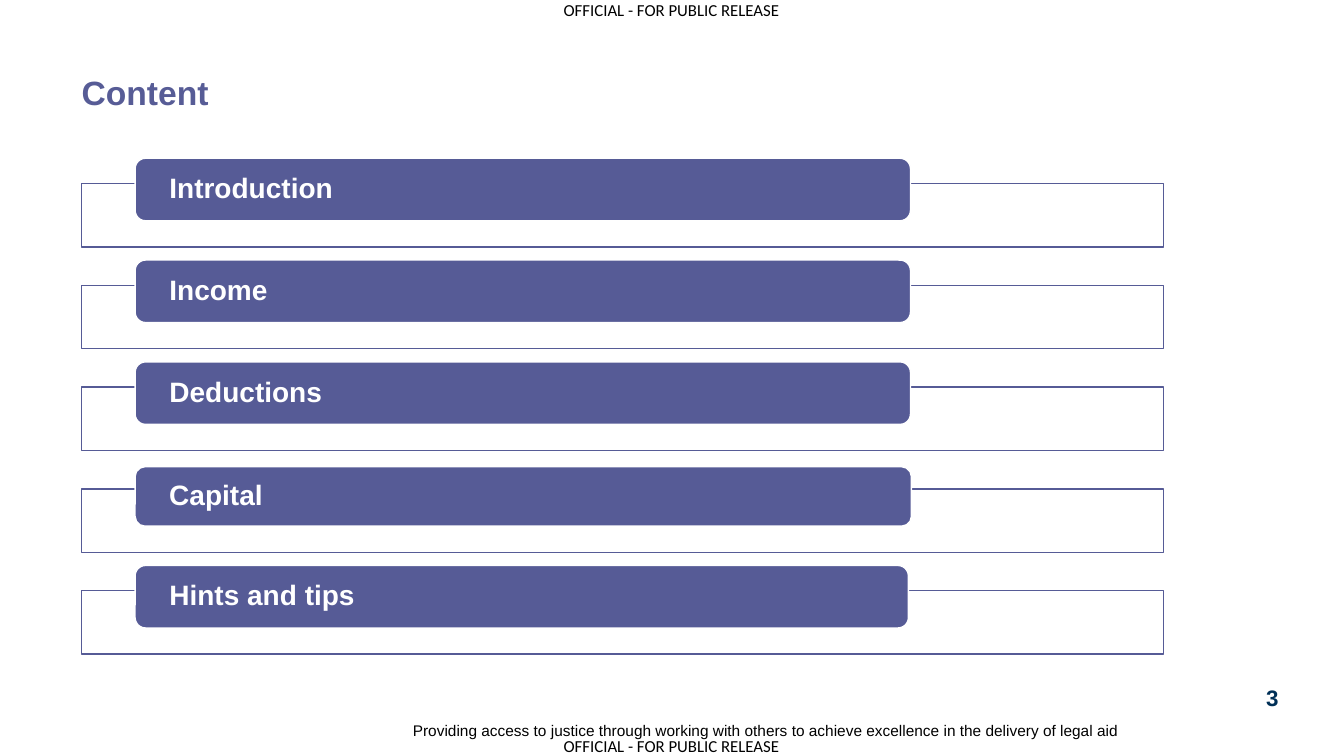
from lxml import etree
from pptx import Presentation
from pptx.dml.color import RGBColor
from pptx.enum import shapes, text
from pptx.oxml.ns import qn
from pptx.util import Inches, Pt

TITLE = "Content"
PAGE_NUMBER = "3"
MARKING = "OFFICIAL - FOR PUBLIC RELEASE"
MISSION = ("Providing access to justice through working with others "
           "to achieve excellence in the delivery of legal aid")
TOPICS = [
    ("Introduction", 7.69, 0.62),
    ("Income", 7.69, 0.62),
    ("Deductions", 7.69, 0.62),
    ("Capital", 7.7, 0.59),
    ("Hints and tips", 7.67, 0.62),
]

THEME = {
    "font": "Arial", "marking_font": "Calibri",
    "title": "575C96", "bar": "565B96", "white": "FFFFFF",
    "number": "003057", "black": "000000",
    "title_size": 24, "topic_size": 20, "number_size": 16,
    "marking_size": 12, "mission_size": 11, "line": 1,
}

MARGIN = 0.81
FRAME_TOP, FRAME_PITCH = 1.82, 1.01
FRAME_WIDTH, FRAME_HEIGHT = 10.73, 0.63
BAR_LEFT, BAR_OVERLAP, BAR_INSET = 1.34, 0.37, 0.31


def write(shape, words, size, color, bold=False, font=THEME["font"],
          align=text.PP_ALIGN.LEFT, anchor=text.MSO_ANCHOR.TOP,
          inset=0, wrap=True, spacing=None):
    frame = shape.text_frame
    frame.word_wrap = wrap
    frame.vertical_anchor = anchor
    frame.margin_left = frame.margin_right = Inches(inset)
    frame.margin_top = frame.margin_bottom = 0
    frame.text = words
    para = frame.paragraphs[0]
    para.alignment = align
    para.line_spacing = spacing
    span = para.runs[0]
    span.font.name = font
    span.font.size = Pt(size)
    span.font.bold = bold
    span.font.color.rgb = RGBColor.from_string(color)


def add_text(page, area, words, size, color, **style):
    box = page.shapes.add_textbox(*map(Inches, area))
    write(box, words, size, color, **style)


def add_block(page, kind, area, fill, line):
    block = page.shapes.add_shape(kind, *map(Inches, area))
    block.shadow.inherit = False
    block.fill.solid()
    block.fill.fore_color.rgb = RGBColor.from_string(fill)
    block.line.color.rgb = RGBColor.from_string(line)
    block.line.width = Pt(THEME["line"])
    return block


def add_topic(page, index, label, width, height):
    top = FRAME_TOP + index * FRAME_PITCH
    frame = add_block(page, shapes.MSO_SHAPE.RECTANGLE,
                      (MARGIN, top, FRAME_WIDTH, FRAME_HEIGHT),
                      THEME["white"], THEME["bar"])
    color = frame.fill._xPr.find(qn("a:solidFill"))[0]
    etree.SubElement(color, qn("a:alpha")).set("val", "90000")
    bar = add_block(page, shapes.MSO_SHAPE.ROUNDED_RECTANGLE,
                    (BAR_LEFT, top + BAR_OVERLAP - height, width, height),
                    THEME["bar"], THEME["white"])
    write(bar, label, THEME["topic_size"], THEME["white"], bold=True,
          anchor=text.MSO_ANCHOR.MIDDLE, inset=BAR_INSET, spacing=0.9)


def main():
    deck = Presentation()
    deck.slide_width, deck.slide_height = Inches(13.33), Inches(7.5)
    page = deck.slides.add_slide(deck.slide_layouts[6])
    for top in (0, 7.3):
        add_text(page, (5.59, top, 2.18, 0.2), MARKING, THEME["marking_size"],
                 THEME["black"], font=THEME["marking_font"], wrap=False)
    add_text(page, (MARGIN, 0.76, 8.44, 0.38), TITLE, THEME["title_size"],
             THEME["title"], bold=True, spacing=0.9)
    add_text(page, (12.47, 6.79, 0.3, 0.28), PAGE_NUMBER, THEME["number_size"],
             THEME["number"], bold=True, align=text.PP_ALIGN.CENTER)
    for index, topic in enumerate(TOPICS):
        add_topic(page, index, *topic)
    add_text(page, (3.22, 7.14, 7.88, 0.2), MISSION, THEME["mission_size"],
             THEME["black"], align=text.PP_ALIGN.RIGHT,
             anchor=text.MSO_ANCHOR.BOTTOM)
    deck.save("out.pptx")


if __name__ == "__main__":
    main()
